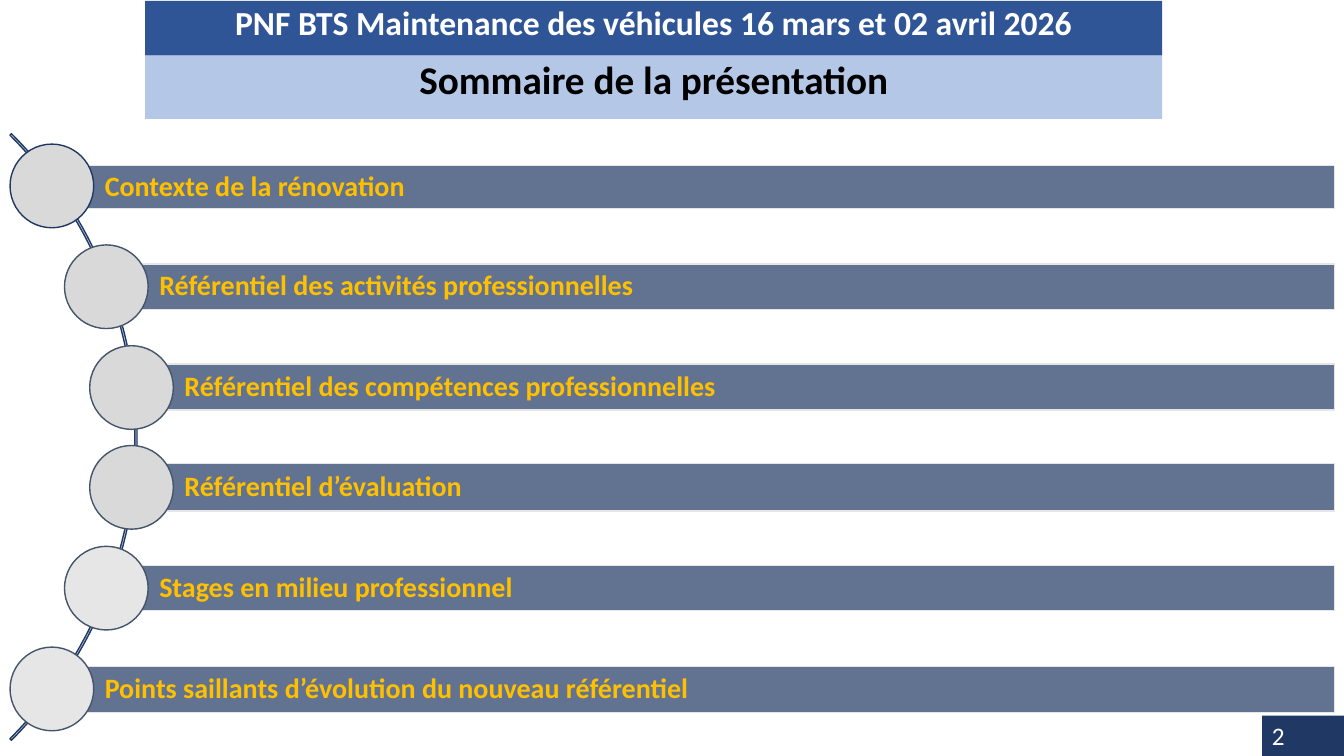
from dataclasses import dataclass

from lxml.etree import SubElement
from pptx import Presentation
from pptx.dml.color import RGBColor
from pptx.enum.shapes import MSO_SHAPE
from pptx.enum.text import MSO_ANCHOR, MSO_AUTO_SIZE, PP_ALIGN
from pptx.oxml.ns import qn
from pptx.util import Pt

EMU_PER_PX = 9144


@dataclass(frozen=True)
class Theme:
    """Colours, font and type sizes of the slide."""
    font: str = "Calibri"
    navy: str = "203864"
    blue: str = "2F5597"
    light_blue: str = "B4C7E7"
    pale_blue: str = "DAE3F3"
    slate: str = "44546A"
    grey: str = "D9D9D9"
    light_grey: str = "E7E6E6"
    gold: str = "FFC000"
    white: str = "FFFFFF"
    black: str = "000000"
    heading_size: int = 28
    event_size: int = 24
    topic_size: int = 20
    number_size: int = 18


THEME = Theme()

TOPICS = [
    ("Contexte de la rénovation", 51, 164, 43, THEME.grey, THEME.navy),
    ("Référentiel des activités professionnelles", 105, 262, 45, THEME.grey, THEME.slate),
    ("Référentiel des compétences professionnelles", 130, 361, 46, THEME.grey, THEME.slate),
    ("Référentiel d’évaluation", 130, 460, 47, THEME.grey, THEME.slate),
    ("Stages en milieu professionnel", 105, 561, 45, THEME.light_grey, THEME.slate),
    ("Points saillants d’évolution du nouveau référentiel", 51, 661, 46,
     THEME.light_grey, THEME.slate),
]
BAR_RIGHT = 1324
DOT_SIZE = 83
DOT_TOP = 143
DOT_STEP = 99.8


def px(length):
    """Turn pixels into EMU."""
    return round(length * EMU_PER_PX)


def apply(target, values):
    """Set each attribute named in a dict of format values."""
    for name, value in values.items():
        setattr(target, name, value)


def place(shape, left, top, width, height):
    """Move and size a shape, in pixels."""
    apply(shape, {"left": px(left), "top": px(top),
                  "width": px(width), "height": px(height)})


def paint(shape, colour):
    """Give a shape a solid fill."""
    shape.fill.solid()
    shape.fill.fore_color.rgb = RGBColor.from_string(colour)


def add_figure(page, kind, bounds, fill, line=None):
    """Add a flat preset shape with an optional outline."""
    shape = page.shapes.add_shape(kind, *map(px, bounds))
    shape.shadow.inherit = False
    paint(shape, fill)
    if line:
        shape.line.color.rgb = RGBColor.from_string(line)
        shape.line.width = Pt(1)
    else:
        shape.line.fill.background()
    return shape


def write(shape, text, size, colour, bold=True, align=PP_ALIGN.LEFT,
          anchor=MSO_ANCHOR.TOP, spacing=0.9, insets=(10, 5, 10, 5)):
    """Write one formatted paragraph into a shape."""
    left, top, right, bottom = map(px, insets)
    frame = shape.text_frame
    apply(frame, {"word_wrap": True, "auto_size": MSO_AUTO_SIZE.NONE,
                  "vertical_anchor": anchor, "margin_left": left, "margin_top": top,
                  "margin_right": right, "margin_bottom": bottom})
    para = frame.paragraphs[0]
    apply(para, {"alignment": align, "line_spacing": spacing, "space_before": Pt(0)})
    span = para.add_run()
    span.text = text
    apply(span.font, {"name": THEME.font, "size": Pt(size), "bold": bold})
    span.font.color.rgb = RGBColor.from_string(colour)


def add_banner(placeholder, bounds, fill, text, size, colour):
    """Turn a placeholder into a centred heading band."""
    place(placeholder, *bounds)
    paint(placeholder, fill)
    write(placeholder, text, size, colour, align=PP_ALIGN.CENTER)


def add_arc(page):
    """Add the thin arc that links the topics."""
    arc = add_figure(page, MSO_SHAPE.BLOCK_ARC, (-715, 8, 851, 851),
                     THEME.pale_blue, THEME.navy)
    for index, value in enumerate((189, 27, 0.0025)):
        arc.adjustments[index] = value


def add_topic(page, index, text, left, top, height, dot_fill, dot_line):
    """Add a translucent topic bar and its round marker."""
    bar = add_figure(page, MSO_SHAPE.RECTANGLE, (left, top, BAR_RIGHT - left, height),
                     THEME.navy, THEME.light_grey)
    colour = bar.fill._xPr.find(qn("a:solidFill"))[0]
    SubElement(colour, qn("a:alpha"), val="70000")
    write(bar, text, THEME.topic_size, THEME.gold, anchor=MSO_ANCHOR.MIDDLE,
          insets=(53, 6, 6, 6))
    dot_top = DOT_TOP + round(index * DOT_STEP)
    add_figure(page, MSO_SHAPE.OVAL, (left - DOT_SIZE // 2, dot_top, DOT_SIZE, DOT_SIZE),
               dot_fill, dot_line)


def add_page_number(page, number):
    """Add the page number in the bottom right corner."""
    box = add_figure(page, MSO_SHAPE.RECTANGLE, (1252, 710, 82, 40), THEME.navy)
    write(box, number, THEME.number_size, THEME.white, bold=False, spacing=1.0)


def main():
    """Build the summary slide and save it."""
    deck = Presentation()
    apply(deck, {"slide_width": px(1333.33), "slide_height": px(750)})
    page = deck.slides.add_slide(deck.slide_layouts.get_by_name("Content with Caption"))
    title, content, caption = page.placeholders
    content.element.getparent().remove(content.element)
    add_banner(title, (144, 55, 1009, 63), THEME.light_blue,
               "Sommaire de la présentation", THEME.heading_size, THEME.black)
    add_banner(caption, (144, 1, 1009, 54), THEME.blue,
               "PNF BTS Maintenance des véhicules 16 mars et 02 avril 2026",
               THEME.event_size, THEME.white)
    add_page_number(page, "2")
    add_arc(page)
    for index, topic in enumerate(TOPICS):
        add_topic(page, index, *topic)
    deck.save("out.pptx")


if __name__ == "__main__":
    main()
